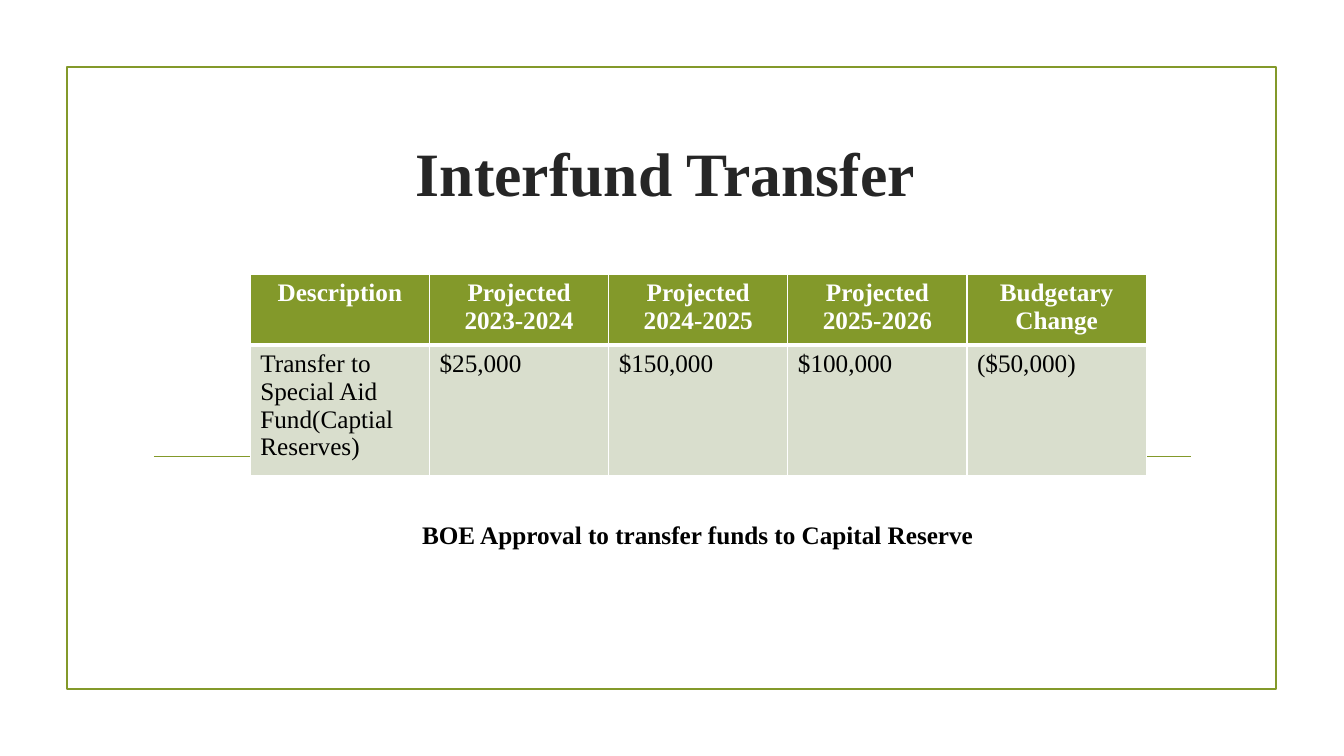
from lxml import etree
from pptx import Presentation
from pptx import util as u
from pptx.dml.color import RGBColor
from pptx.enum import shapes, text
from pptx.oxml import ns

COLORS = {"green": "83992A", "sage": "D9DECD", "ink": "262626", "black": "000000", "white": "FFFFFF"}
CENTER = text.PP_ALIGN.CENTER
LEFT = text.PP_ALIGN.LEFT


class SlideBuilder:
    font = "Times New Roman"
    line_width = 1.25

    def __init__(self, page):
        self.page = page

    def color(self, name):
        return RGBColor.from_string(COLORS[name])

    def style_line(self, line):
        line.color.rgb = self.color("green")
        line.width = u.Pt(self.line_width)

    def frame(self, left, top, width, height):
        box = self.page.shapes.add_shape(
            shapes.MSO_SHAPE.RECTANGLE, *map(u.Pt, (left, top, width, height)))
        box.shadow.inherit = False
        box.fill.background()
        self.style_line(box.line)

    def rule(self, left, right, y):
        line = self.page.shapes.add_connector(
            shapes.MSO_CONNECTOR.STRAIGHT, *map(u.Pt, (left, y, right, y)))
        self.style_line(line.line)
        etree.SubElement(line._element.spPr, ns.qn("a:effectLst"))

    def set_text(self, frame, content, size, color, bold, align):
        frame.text = content
        for paragraph in frame.paragraphs:
            paragraph.alignment = align
            paragraph.font.name = self.font
            paragraph.font.size = u.Pt(size)
            paragraph.font.bold = bold
            paragraph.font.color.rgb = self.color(color)

    def label(self, left, top, width, height, content, size, color, anchor):
        box = self.page.shapes.add_textbox(*map(u.Pt, (left, top, width, height)))
        box.text_frame.word_wrap = True
        box.text_frame.vertical_anchor = anchor
        self.set_text(box.text_frame, content, size, color, True, CENTER)

    def border(self, cell, side, width):
        properties = cell._tc.get_or_add_tcPr()
        edge = etree.SubElement(properties, ns.qn(f"a:ln{side}"), w=str(u.Pt(width)))
        fill = etree.SubElement(edge, ns.qn("a:solidFill"))
        etree.SubElement(fill, ns.qn("a:srgbClr"), val=COLORS["white"])

    def table(self, left, top, width, heights, rows):
        table = self.page.shapes.add_table(
            len(rows), len(rows[0]), *map(u.Pt, (left, top, width, sum(heights)))).table
        for column in table.columns:
            column.width = u.Pt(width / len(rows[0]))
        for r, (height, row) in enumerate(zip(heights, rows)):
            table.rows[r].height = u.Pt(height)
            header = r == 0
            for c, content in enumerate(row):
                cell = table.cell(r, c)
                for side in "LRTB":
                    shared = side == ("B" if header else "T")
                    self.border(cell, side, 3 if shared else 1)
                cell.fill.solid()
                cell.fill.fore_color.rgb = self.color("green" if header else "sage")
                self.set_text(cell.text_frame, content, 18, "white" if header else "black",
                              header, CENTER if header else LEFT)


def main():
    deck = Presentation()
    deck.slide_width, deck.slide_height = u.Pt(960), u.Pt(540)
    slide = SlideBuilder(deck.slides.add_slide(deck.slide_layouts[6]))
    slide.frame(47.7, 48, 864, 444)
    slide.rule(110, 850.5, 326)
    slide.label(103, 77, 755, 91.5, "Interfund Transfer ", 44, "ink", text.MSO_ANCHOR.MIDDLE)
    years = ["2023-2024", "2024-2025", "2025-2026"]
    slide.table(178.8, 195.8, 640, [47, 87], [
        ["Description", *[f"Projected\n{year}" for year in years], "Budgetary Change"],
        ["Transfer to Special Aid Fund(Captial Reserves)",
         "$25,000", "$150,000", "$100,000", "($50,000)"],
    ])
    slide.label(178.8, 367.2, 643.7, 29, "BOE Approval to transfer funds to Capital Reserve ",
                18, "black", text.MSO_ANCHOR.TOP)
    deck.save("out.pptx")


if __name__ == "__main__":
    main()
